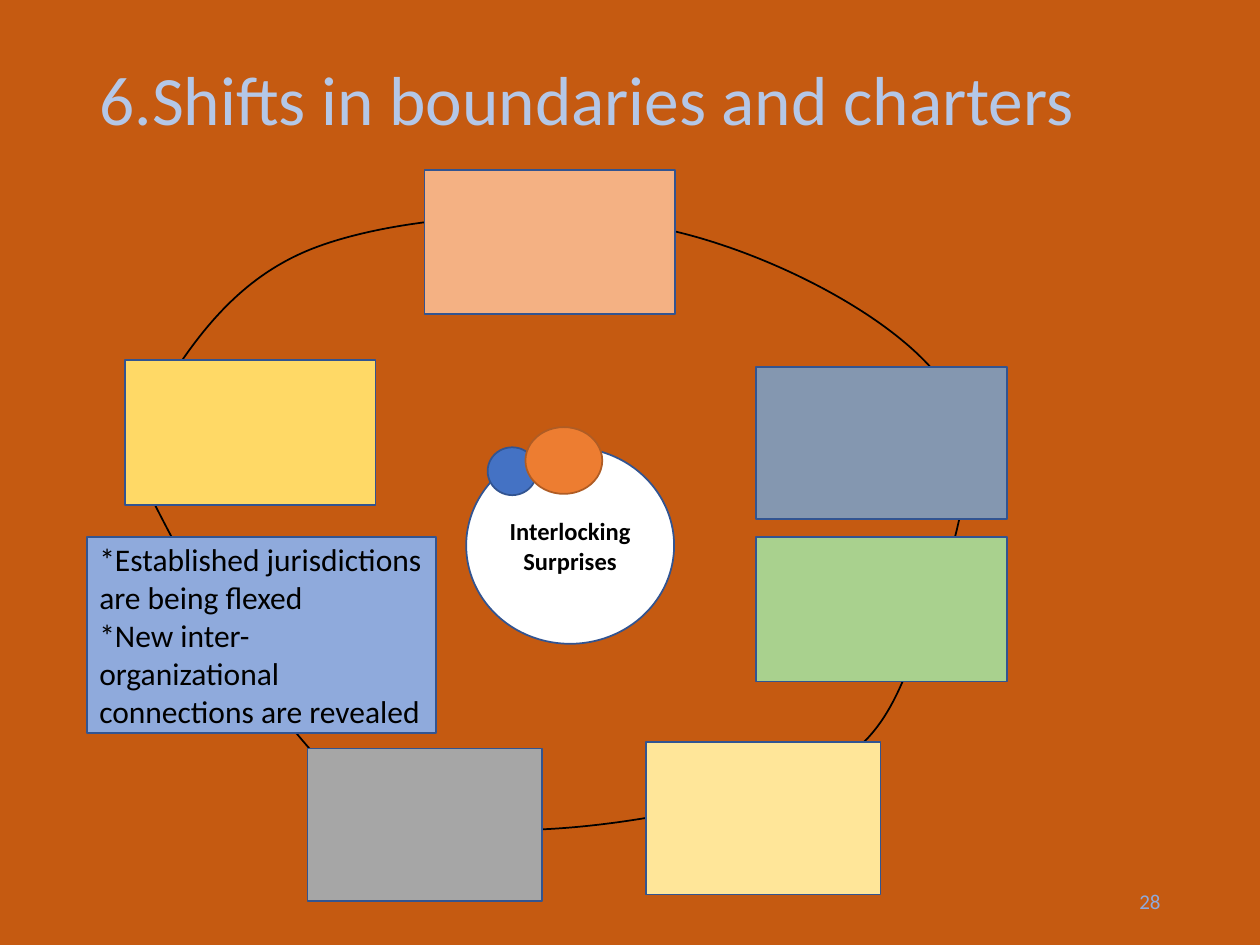
import lxml.etree
import pptx
import pptx.util
import pptx.dml.color
import pptx.enum.shapes
import pptx.enum.text
import pptx.oxml.ns

Inch = pptx.util.Inches
Pt = pptx.util.Pt
Kind = pptx.enum.shapes.MSO_SHAPE
Align = pptx.enum.text.PP_ALIGN
tag = pptx.oxml.ns.qn

FONT = "Calibri"
HUES = {
    "back": "C55A11", "title": "B4C7E7", "edge": "325491", "rust": "AF5C24",
    "black": "000000", "white": "FFFFFF", "peach": "F4B183", "slate": "8497B0",
    "green": "A9D18E", "cream": "FFE699", "sky": "8FAADC", "gold": "FFD966",
    "gray": "A6A6A6", "blue": "4472C4", "orange": "ED7D31",
}
TITLE = "6.Shifts in boundaries and charters"
NOTES = ["*Established jurisdictions are being flexed",
         "*New inter-organizational connections are revealed"]
HUB = ["Interlocking Surprises"]

# Ring: bounds, start point, then Bezier pieces (two handles and an end)
BOUNDS = (1.05, 1.71, 6.62, 4.87)
START = (1.09, 3.43)
CURVES = [
    ((1.44, 2.84), (1.79, 2.24), (2.49, 1.97)),
    ((3.19, 1.7), (4.44, 1.63), (5.28, 1.82)),
    ((6.12, 2), (7.18, 2.55), (7.52, 3.09)),
    ((7.86, 3.62), (7.53, 4.49), (7.32, 5.02)),
    ((7.11, 5.54), (7, 5.99), (6.28, 6.22)),
    ((5.56, 6.45), (3.86, 6.82), (2.99, 6.39)),
    ((2.12, 5.96), (1.05, 3.64), (1.05, 3.64)),
]

RECT, OVAL = Kind.RECTANGLE, Kind.OVAL
# kind, (left, top, width, height), fill, edge, text, size, bold, align
SHAPES = [
    (RECT, (3.37, 1.35, 1.99, 1.14), "peach", "edge"),
    (RECT, (6, 2.91, 1.99, 1.21), "slate", "edge"),
    (RECT, (6, 4.26, 1.99, 1.15), "green", "edge"),
    (RECT, (5.13, 5.89, 1.86, 1.21), "cream", "edge"),
    (RECT, (0.69, 4.26, 2.77, 1.56), "sky", "edge", NOTES, 18, False, Align.LEFT),
    (RECT, (0.99, 2.86, 1.99, 1.15), "gold", "edge"),
    (OVAL, (3.7, 3.55, 1.65, 1.56), "white", "edge", HUB, 14, True, Align.CENTER),
    (RECT, (2.44, 5.94, 1.86, 1.21), "gray", "edge"),
    (OVAL, (3.87, 3.55, 0.39, 0.38), "blue", "edge"),
    (OVAL, (4.17, 3.39, 0.61, 0.53), "orange", "rust"),
]


def hue(name):
    return pptx.dml.color.RGBColor.from_string(HUES[name])


def place(shape, box):
    shape.left, shape.top, shape.width, shape.height = map(Inch, box)


def write(shape, lines, size, color, align, bold=False):
    frame = shape.text_frame
    frame.word_wrap = True
    frame.auto_size = pptx.enum.text.MSO_AUTO_SIZE.NONE
    frame.vertical_anchor = pptx.enum.text.MSO_ANCHOR.MIDDLE
    for i, line in enumerate(lines):
        para = frame.add_paragraph() if i else frame.paragraphs[0]
        para.alignment = align
        run = para.add_run()
        run.text = line
        run.font.name, run.font.size, run.font.bold = FONT, Pt(size), bold
        run.font.color.rgb = hue(color)


def trim(shape, edge):
    """Give a shape a thin outline and no shadow."""
    shape.shadow.inherit = False
    shape.line.color.rgb = hue(edge)
    shape.line.width = Pt(1)


def curve(slide, box, start, pieces):
    """Draw an open outline of cubic Bezier pieces."""
    ends = [tuple(map(Inch, piece[-1])) for piece in pieces]
    pen = slide.shapes.build_freeform(*map(Inch, start))
    pen.add_line_segments(ends, close=False)
    shape = pen.convert_to_shape()
    place(shape, box)
    left, top, wide, high = box
    track = next(shape.element.iter(tag("a:path")))
    track.set("w", str(Inch(wide)))
    track.set("h", str(Inch(high)))
    for step in list(track):
        track.remove(step)
    steps = [("a:moveTo", [start])] + [("a:cubicBezTo", p) for p in pieces]
    for name, points in steps:
        step = lxml.etree.SubElement(track, tag(name))
        for x, y in points:
            lxml.etree.SubElement(step, tag("a:pt"), x=str(Inch(x - left)),
                                  y=str(Inch(y - top)))
    return shape


def main():
    deck = pptx.Presentation()
    deck.slide_width, deck.slide_height = Inch(10), Inch(7.5)
    slide = deck.slides.add_slide(deck.slide_layouts[5])
    slide.background.fill.solid()
    slide.background.fill.fore_color.rgb = hue("back")

    title = slide.shapes.title
    place(title, (0.69, 0.4, 8.51, 0.83))
    write(title, [TITLE], 39.6, "title", Align.LEFT)
    title.text_frame.paragraphs[0].line_spacing = 0.9

    page = slide.shapes.add_textbox(*map(Inch, (7.06, 6.95, 2.25, 0.4)))
    write(page, ["28"], 12, "sky", Align.RIGHT)

    ring = curve(slide, BOUNDS, START, CURVES)
    ring.fill.background()
    trim(ring, "black")

    for kind, box, fill, edge, *words in SHAPES:
        shape = slide.shapes.add_shape(kind, *map(Inch, box))
        shape.fill.solid()
        shape.fill.fore_color.rgb = hue(fill)
        trim(shape, edge)
        if words:
            lines, size, bold, align = words
            write(shape, lines, size, "black", align, bold)

    deck.save("out.pptx")


if __name__ == "__main__":
    main()
